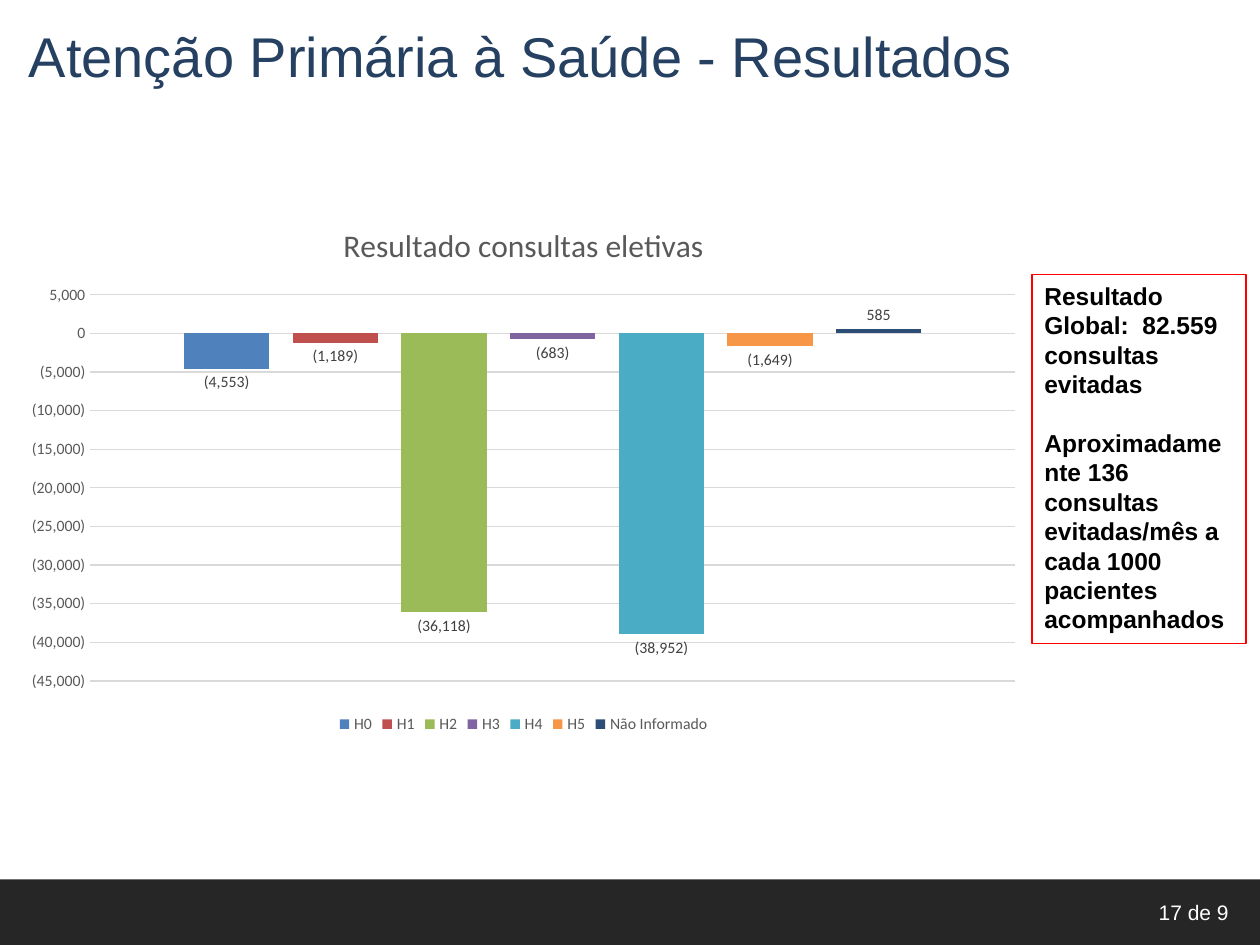
"""Builds the slide on elective consultation results in primary health care."""
from pptx import Presentation
from pptx.chart import data
from pptx.dml.color import RGBColor
from pptx.enum import chart as ch, shapes, text
from pptx.util import Inches, Pt

WHITE = RGBColor(0xFF, 0xFF, 0xFF)
BLACK = RGBColor(0, 0, 0)
CHARCOAL = RGBColor(0x26, 0x26, 0x26)
NAVY = RGBColor(0x25, 0x40, 0x61)
RED = RGBColor(0xFF, 0, 0)
GRID = RGBColor(0xD9, 0xD9, 0xD9)
GRAY = RGBColor(0x59, 0x59, 0x59)
LABEL = RGBColor(0x40, 0x40, 0x40)
NUMBER_FORMAT = r"#,##0;\(#,##0\)"

HOSPITALS = [
    ("H0", -4553, RGBColor(0x4F, 0x81, 0xBD)),
    ("H1", -1189, RGBColor(0xC0, 0x50, 0x4D)),
    ("H2", -36118, RGBColor(0x9B, 0xBB, 0x59)),
    ("H3", -683, RGBColor(0x80, 0x64, 0xA2)),
    ("H4", -38952, RGBColor(0x4B, 0xAC, 0xC6)),
    ("H5", -1649, RGBColor(0xF7, 0x96, 0x46)),
    ("Não Informado", 585, RGBColor(0x2C, 0x4D, 0x75)),
]


def set_font(font, size, color, name="Arial", bold=False):
    font.size, font.name, font.bold = Pt(size), name, bold
    font.color.rgb = color


def write(frame, lines, size, color, align=text.PP_ALIGN.LEFT, bold=False):
    frame.word_wrap = True
    frame.text = "\n".join(lines)
    for paragraph in frame.paragraphs:
        paragraph.alignment = align
        set_font(paragraph.runs[0].font, size, color, bold=bold)


prs = Presentation()
prs.slide_width, prs.slide_height = Inches(10), Inches(7.5)
slide = prs.slides.add_slide(prs.slide_layouts[6])

footer = slide.shapes.add_shape(
    shapes.MSO_SHAPE.RECTANGLE, Inches(0), Inches(6.98), Inches(10), Inches(0.52))
footer.shadow.inherit = False
footer.fill.solid()
footer.fill.fore_color.rgb = CHARCOAL
footer.line.fill.background()

page = slide.shapes.add_textbox(Inches(6.42), Inches(7.09), Inches(3.43), Inches(0.3))
write(page.text_frame, ["17 de 9"], 12, WHITE, text.PP_ALIGN.RIGHT)

heading = slide.shapes.add_textbox(Inches(0.13), Inches(0.12), Inches(9.61), Inches(0.64))
write(heading.text_frame, ["Atenção Primária à Saúde - Resultados"], 32, NAVY)

consultations = data.CategoryChartData(number_format=NUMBER_FORMAT)
consultations.categories = ["1"]
for name, value, _ in HOSPITALS:
    consultations.add_series(name, [value])
chart = slide.shapes.add_chart(
    ch.XL_CHART_TYPE.COLUMN_CLUSTERED, Inches(0.09), Inches(1.59),
    Inches(8.13), Inches(4.27), consultations).chart
set_font(chart.font, 10, BLACK, "Calibri")

chart.has_title = True
chart.chart_title.include_in_layout = False
chart_heading = chart.chart_title.text_frame
chart_heading.text = "Resultado consultas eletivas"
set_font(chart_heading.paragraphs[0].runs[0].font, 18, GRAY, "Calibri")

chart.has_legend = True
chart.legend.position = ch.XL_LEGEND_POSITION.BOTTOM
chart.legend.include_in_layout = False
set_font(chart.legend.font, 9, GRAY, "Calibri")

chart.category_axis.visible = False
scale = chart.value_axis
scale.minimum_scale, scale.maximum_scale, scale.major_unit = -45000, 5000, 5000
scale.major_tick_mark = scale.minor_tick_mark = ch.XL_TICK_MARK.NONE
scale.format.line.fill.background()
scale.major_gridlines.format.line.color.rgb = GRID
scale.major_gridlines.format.line.width = Pt(0.75)
scale.tick_labels.number_format = NUMBER_FORMAT
scale.tick_labels.number_format_is_linked = False
set_font(scale.tick_labels.font, 9, GRAY, "Calibri")

columns = chart.plots[0]
columns.vary_by_categories = False
columns.gap_width, columns.overlap = 219, -27
for series, (_, _, color) in zip(columns.series, HOSPITALS):
    series.invert_if_negative = False
    series.format.fill.solid()
    series.format.fill.fore_color.rgb = color
    labels = series.data_labels
    labels.show_value = True
    labels.position = ch.XL_LABEL_POSITION.OUTSIDE_END
    labels.number_format = NUMBER_FORMAT
    labels.number_format_is_linked = False
    set_font(labels.font, 9, LABEL, "Calibri")

summary = slide.shapes.add_shape(
    shapes.MSO_SHAPE.RECTANGLE, Inches(8.19), Inches(2.18), Inches(1.7), Inches(2.93))
summary.shadow.inherit = False
summary.fill.background()
summary.line.color.rgb = RED
summary.line.width = Pt(0.75)
summary.text_frame.vertical_anchor = text.MSO_ANCHOR.TOP
write(summary.text_frame, [
    "Resultado Global:  82.559 consultas evitadas",
    "Aproximadamente 136 consultas evitadas/mês a cada 1000 pacientes acompanhados",
], 14, BLACK, bold=True)
summary.text_frame.paragraphs[1].space_before = Pt(16.8)

prs.save("out.pptx")
